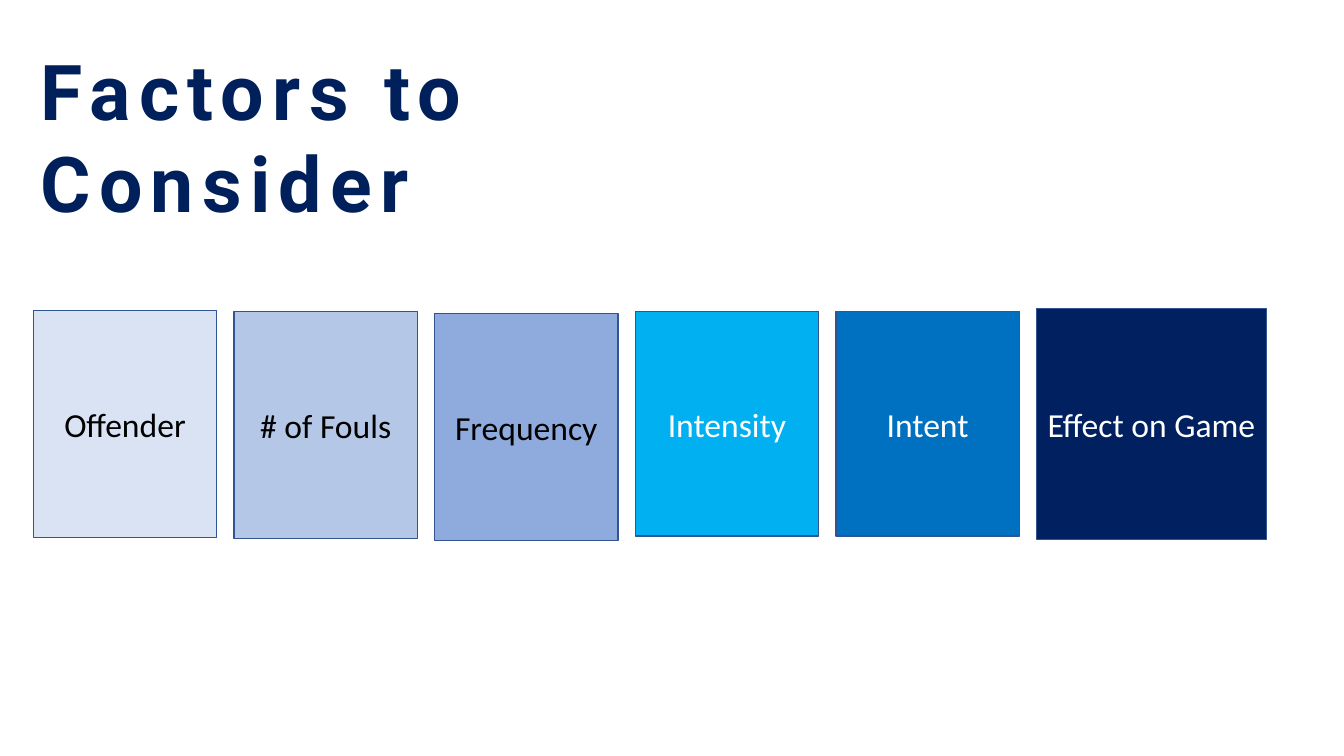
from pptx import Presentation
from pptx.dml.color import RGBColor as RGB
from pptx.enum.shapes import MSO_SHAPE as Shape
from pptx.enum.text import MSO_ANCHOR as Anchor, MSO_AUTO_SIZE as AutoSize, PP_ALIGN as Align
from pptx.util import Pt

PX = 9144  # 100 px to the inch


class Theme:
    heading_font, body_font = "Roboto", "Calibri"
    heading_size, label_size, outline_width = Pt(55), Pt(24), Pt(1)
    heading = RGB.from_string("00205B")
    outline = RGB.from_string("325491")
    dark, light = RGB.from_string("000000"), RGB.from_string("FFFFFF")


def place(item, left, top, width, height):
    item.left, item.top = left * PX, top * PX
    item.width, item.height = width * PX, height * PX


def add_text(frame, text, font_name, size, color, align):
    paragraph = frame.paragraphs[0]
    paragraph.alignment = align
    run = paragraph.add_run()
    run.text = text
    run.font.name, run.font.size = font_name, size
    run.font.color.rgb = color
    return run


deck = Presentation()
deck.slide_width, deck.slide_height = 1333 * PX, 750 * PX
slide = deck.slides.add_slide(deck.slide_layouts[5])

# Heading
heading = slide.shapes.title
place(heading, 33, 33, 654, 103)
frame = heading.text_frame
frame.word_wrap = True
frame.auto_size = AutoSize.SHAPE_TO_FIT_TEXT
frame.vertical_anchor = Anchor.TOP
frame.margin_left = frame.margin_right = 7 * PX
frame.margin_top = frame.margin_bottom = 10 * PX
heading_run = add_text(frame, "Factors to Consider", Theme.heading_font,
                       Theme.heading_size, Theme.heading, Align.LEFT)
heading_run.font.bold = True
heading_run.font._element.set("spc", "600")

# Row of factors: label, fill, text colour, top, width, height
FACTORS = [
    ("Offender", "DAE3F3", Theme.dark, 308, 182, 225),
    ("# of Fouls", "B4C7E7", Theme.dark, 309, 182, 225),
    ("Frequency", "8FAADC", Theme.dark, 311, 182, 225),
    ("Intensity", "00B0F0", Theme.light, 309, 182, 223),
    ("Intent", "0070C0", Theme.light, 309, 182, 223),
    ("Effect on Game", "002060", Theme.light, 306, 228, 229),
]
GAP = 17
left = 33
for label, fill, text_color, top, width, height in FACTORS:
    factor = slide.shapes.add_shape(Shape.RECTANGLE, 0, 0, 0, 0)
    place(factor, left, top, width, height)
    factor.shadow.inherit = False
    factor.fill.solid()
    factor.fill.fore_color.rgb = RGB.from_string(fill)
    factor.line.color.rgb = Theme.outline
    factor.line.width = Theme.outline_width
    factor.text_frame.word_wrap = True
    factor.text_frame.vertical_anchor = Anchor.MIDDLE
    add_text(factor.text_frame, label, Theme.body_font,
             Theme.label_size, text_color, Align.CENTER)
    left += width + GAP

deck.save("out.pptx")
